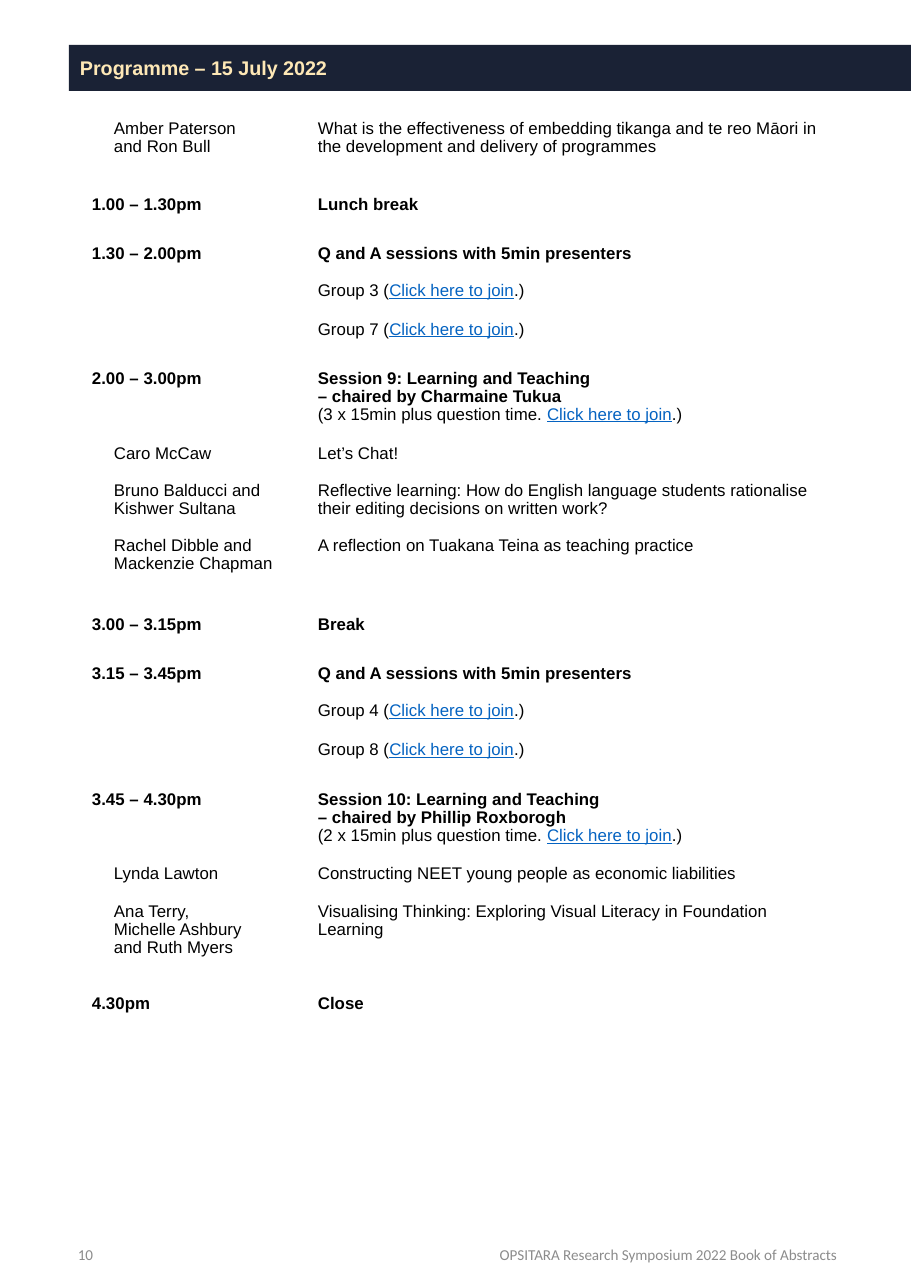
from lxml.etree import SubElement
from pptx import Presentation
from pptx.dml.color import RGBColor
from pptx.enum.text import MSO_ANCHOR as Anchor, PP_ALIGN as Align
from pptx.oxml.ns import qn
from pptx.util import Pt

PX = 8298
NAVY = RGBColor(0x1A, 0x22, 0x35)
CREAM = RGBColor(0xFE, 0xE8, 0xB6)
BLACK = RGBColor(0, 0, 0)
LINK_BLUE = RGBColor(0x05, 0x63, 0xC1)
GREY = RGBColor(0x8C, 0x8C, 0x8C)

JOIN = "Click here to join"
Q_AND_A = "Q and A sessions with 5min presenters"
BODY_SIZE = 11
COLUMN_WIDTHS = (237, 535)
SPEAKER_INDENT = 22

# (height, left text, right text, bold lines)
PROGRAMME = [
    (76, "Amber Paterson\nand Ron Bull",
     "What is the effectiveness of embedding tikanga and te reo Māori in "
     "the development and delivery of programmes", 0),
    (49, "1.00 – 1.30pm", "Lunch break", 1),
    (37, "1.30 – 2.00pm", Q_AND_A, 1),
    (38, "", f"Group 3 ({JOIN}.)", 0),
    (49, "", f"Group 7 ({JOIN}.)", 0),
    (75, "2.00 – 3.00pm",
     "Session 9: Learning and Teaching\n– chaired by Charmaine Tukua\n"
     f"(3 x 15min plus question time. {JOIN}.)", 2),
    (37, "Caro McCaw", "Let’s Chat!", 0),
    (56, "Bruno Balducci and Kishwer Sultana",
     "Reflective learning: How do English language students rationalise "
     "their editing decisions on written work?", 0),
    (79, "Rachel Dibble and Mackenzie Chapman",
     "A reflection on Tuakana Teina as teaching practice", 0),
    (49, "3.00 – 3.15pm", "Break", 1),
    (37, "3.15 – 3.45pm", Q_AND_A, 1),
    (37, "", f"Group 4 ({JOIN}.)", 0),
    (50, "", f"Group 8 ({JOIN}.)", 0),
    (74, "3.45 – 4.30pm",
     "Session 10: Learning and Teaching\n– chaired by Phillip Roxborogh\n"
     f"(2 x 15min plus question time. {JOIN}.)", 2),
    (38, "Lynda Lawton",
     "Constructing NEET young people as economic liabilities", 0),
    (92, "Ana Terry,\nMichelle Ashbury\nand Ruth Myers",
     "Visualising Thinking: Exploring Visual Literacy in Foundation Learning", 0),
    (61, "4.30pm", "Close", 1),
]


def px(length):
    return length * PX


def write(frame, text, *, size=BODY_SIZE, font="Arial", color=BLACK,
          bold_lines=0, align=Align.LEFT, indent=0, spacing=None):
    for index, line in enumerate(text.split("\n")):
        paragraph = frame.paragraphs[0] if index == 0 else frame.add_paragraph()
        paragraph.alignment = align
        paragraph.space_before = Pt(0)
        if spacing:
            paragraph.line_spacing = spacing
        if indent:
            paragraph._p.get_or_add_pPr().set("marL", str(px(indent)))
        before, link, after = line.partition(JOIN)
        for part in filter(None, (before, link, after)):
            run = paragraph.add_run()
            run.text = part
            run.font.size = Pt(size)
            run.font.name = font
            run.font.bold = index < bold_lines
            run.font.underline = part == JOIN
            run.font.color.rgb = LINK_BLUE if part == JOIN else color
        if not line:
            SubElement(paragraph._p, qn("a:endParaRPr"), sz=str(size * 100))


def set_insets(box, left, top, right, bottom):
    box.margin_left, box.margin_top = px(left), px(top)
    box.margin_right, box.margin_bottom = px(right), px(bottom)


def add_heading(slide, text):
    heading = slide.shapes.title
    heading.left, heading.top = px(69), px(45)
    heading.width, heading.height = px(842), px(46)
    heading.fill.solid()
    heading.fill.fore_color.rgb = NAVY
    frame = heading.text_frame
    frame.word_wrap = True
    frame.vertical_anchor = Anchor.MIDDLE
    set_insets(frame, 11, 0, 11, 0)
    write(frame, text, size=12.9, color=CREAM, bold_lines=1)


def add_programme(slide):
    table = slide.shapes.add_table(
        len(PROGRAMME), len(COLUMN_WIDTHS), px(69), px(111),
        px(sum(COLUMN_WIDTHS)), px(sum(row[0] for row in PROGRAMME))).table
    table.first_row = table.horz_banding = False
    for column, width in zip(table.columns, COLUMN_WIDTHS):
        column.width = px(width)
    for index, (height, who_or_when, topic, bold_lines) in enumerate(PROGRAMME):
        table.rows[index].height = px(height)
        left, right = table.cell(index, 0), table.cell(index, 1)
        for cell, inset in ((left, 23), (right, 12)):
            cell.fill.background()
            cell.vertical_anchor = Anchor.TOP
            set_insets(cell, inset, 9, 12, 9)
        write(left.text_frame, who_or_when, bold_lines=bold_lines,
              indent=0 if bold_lines else SPEAKER_INDENT, spacing=0.96)
        write(right.text_frame, topic, bold_lines=bold_lines, spacing=0.96)


def add_footer(slide, text, left, width, align):
    frame = slide.shapes.add_textbox(px(left), px(1220), px(width), px(68)).text_frame
    frame.word_wrap = True
    frame.vertical_anchor = Anchor.MIDDLE
    write(frame, text, size=9.9, font="Calibri", color=GREY, align=align)


def main():
    deck = Presentation()
    deck.slide_width, deck.slide_height = px(911), px(1288)
    slide = deck.slides.add_slide(deck.slide_layouts[5])
    add_programme(slide)
    add_heading(slide, "Programme – 15 July 2022")
    add_footer(slide, "OPSITARA Research Symposium 2022 Book of Abstracts",
               468, 380, Align.RIGHT)
    add_footer(slide, "10", 67, 205, Align.LEFT)
    deck.save("out.pptx")


if __name__ == "__main__":
    main()
